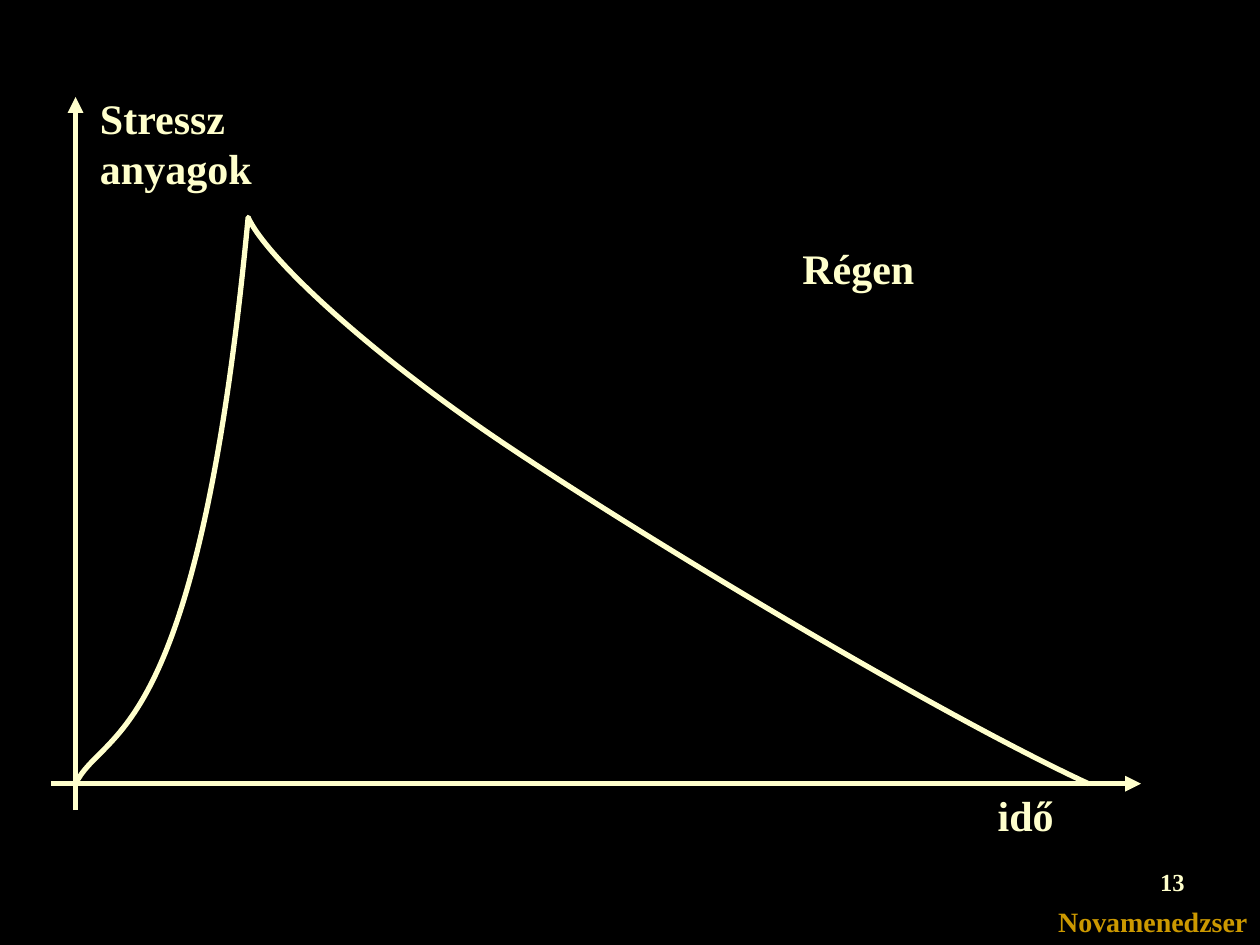
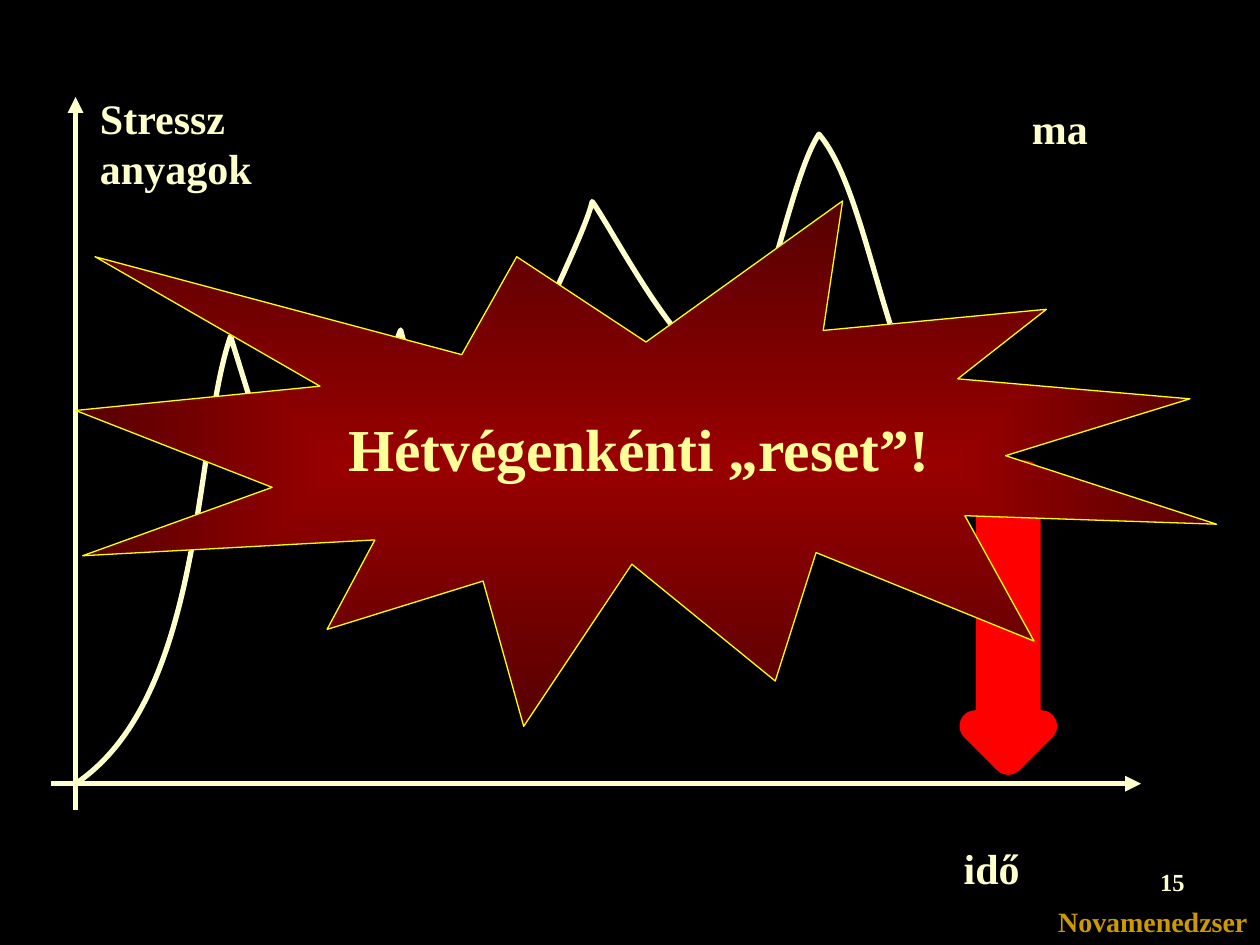
from lxml import etree
from pptx import Presentation, util as u
from pptx.dml.color import RGBColor
from pptx.enum import shapes, text
from pptx.oxml.ns import qn

COLORS = {
    "background": "000000", "chalk": "FFFFCC", "footer": "CC9900", "arrow": "FF0000",
    "seal_core": "990000", "seal_edge": "560000", "seal_line": "FFFF00", "seal_text": "FFFF99",
}
FONT = "Times New Roman"

# The page is a grid of 100 columns by 75 rows.
deck = Presentation()
deck.slide_width, deck.slide_height = u.Inches(10), u.Inches(7.5)
COLUMN, ROW = deck.slide_width / 100, deck.slide_height / 75

ORIGIN = (6, 62.2)
AXES = [((6, 64.3), (6, 7.7)), ((4.05, 62.2), (90.55, 62.2))]

# A curve segment is two control points and an end point, or an end point alone.
charts = [
    {
        "number": "13",
        "labels": [("Régen", 62.7, 18.75, 11), ("idő", 78.2, 62.2, 6.5)],
        "curve": [
            [(8.2, 57.7), (15.7, 59.6), (19.7, 17.25)],
            [(21, 20.2), (28.6, 27.5), (39.7, 35)],
            [(50.8, 42.5), (74.1, 56.5), (86.4, 62.2)],
        ],
    },
    {
        "number": "15",
        "labels": [("ma", 80.9, 7.65, 6.5), ("idő", 75.5, 66.4, 6.5)],
        "curve": [
            [(16.3, 55.3), (15.4, 35.1), (18.3, 26.7)],
            [(21.8, 38)],
            [(23.3, 41), (25.9, 42.9), (27.5, 40.9)],
            [(29.2, 39), (29.8, 31.2), (31.8, 26.2)],
            [(32.6, 29.6), (36.4, 36.4), (38.9, 35.5)],
            [(41.1, 34.8), (41.1, 30.1), (42.4, 26.9)],
            [(43.8, 23.6), (46.6, 17.9), (47, 16)],
            [(48.5, 18), (54.5, 29.8), (57.5, 28.9)],
            [(60.5, 28.1), (62.5, 14.4), (65, 10.65)],
            [(70, 16.5), (70.8, 38.4), (79.7, 36.5)],
        ],
        "reset": "Hétvégenkénti „reset”!",
    },
]


def add_label(page, lines, left, top, width, height, size=24, color="chalk", wrap=False):
    box = page.shapes.add_textbox(*grid(left, top), *grid(width, height))
    box.text_frame.text = lines
    box.text_frame.word_wrap = wrap
    if not wrap:
        box.text_frame.auto_size = text.MSO_AUTO_SIZE.SHAPE_TO_FIT_TEXT
    for para in box.text_frame.paragraphs:
        para.font.name, para.font.size, para.font.bold = FONT, u.Pt(size), True
        para.font.color.rgb = RGBColor.from_string(COLORS[color])
    return box


def grid(column, row):
    return round(column * COLUMN), round(row * ROW)


for chart in charts:
    page = deck.slides.add_slide(deck.slide_layouts[6])
    page.background.fill.solid()
    page.background.fill.fore_color.rgb = RGBColor.from_string(COLORS["background"])
    add_label(page, "Novamenedzser", 83, 71.3, 17, 3.7, 16, "footer")

    # Stress curve: straight segments first, then bent by their control points
    builder = page.shapes.build_freeform(*grid(*ORIGIN))
    builder.add_line_segments([grid(*segment[-1]) for segment in chart["curve"]], close=False)
    curve = builder.convert_to_shape()
    for line, segment in zip(list(curve._element.iter(qn("a:lnTo"))), chart["curve"]):
        if len(segment) == 3:
            bend = etree.Element(qn("a:cubicBezTo"))
            for point in segment:
                x, y = grid(*point)
                etree.SubElement(bend, qn("a:pt"), x=str(x - curve.left), y=str(y - curve.top))
            line.getparent().replace(line, bend)
    curve.shadow.inherit = False
    curve.fill.background()
    curve.line.color.rgb = RGBColor.from_string(COLORS["chalk"])
    curve.line.width = u.Pt(3)
    etree.SubElement(curve.line._get_or_add_ln(), qn("a:round"))

    for tail, tip in AXES:
        axis = page.shapes.add_connector(shapes.MSO_CONNECTOR.STRAIGHT, *grid(*tail), *grid(*tip))
        axis.line.color.rgb = RGBColor.from_string(COLORS["chalk"])
        axis.line.width = u.Pt(3)
        etree.SubElement(axis.line._get_or_add_ln(), qn("a:tailEnd"), type="triangle")
        etree.SubElement(axis._element.spPr, qn("a:effectLst"))

    add_label(page, "Stressz\nanyagok", 6.95, 6.85, 14.2, 9.1)
    for label, left, top, width in chart["labels"]:
        add_label(page, label, left, top, width, 5.1)

    if "reset" in chart:
        arrow = page.shapes.add_shape(
            shapes.MSO_SHAPE.DOWN_ARROW, *grid(77.4, 37.8), *grid(5.25, 22.45))
        arrow.shadow.inherit = False
        arrow.fill.solid()
        arrow.fill.fore_color.rgb = RGBColor.from_string(COLORS["arrow"])
        arrow.line.color.rgb = RGBColor.from_string(COLORS["arrow"])
        arrow.line.width = u.Pt(18)
        etree.SubElement(arrow.line._get_or_add_ln(), qn("a:round"))

        seal = page.shapes.add_shape(
            shapes.MSO_SHAPE.EXPLOSION1, *grid(6, 15.95), *grid(90.55, 41.7))
        seal.shadow.inherit = False
        seal.fill.gradient()
        for stop, position, color in zip(
                seal.fill.gradient_stops, (0, 1), ("seal_core", "seal_edge")):
            stop.position = position
            stop.color.rgb = RGBColor.from_string(COLORS[color])
        gradient = seal._element.spPr.find(qn("a:gradFill"))
        gradient.remove(gradient.find(qn("a:lin")))
        shade = etree.SubElement(gradient, qn("a:path"), path="shape")
        etree.SubElement(shade, qn("a:fillToRect"), l="50000", t="50000", r="50000", b="50000")
        seal.line.color.rgb = RGBColor.from_string(COLORS["seal_line"])
        seal.line.width = u.Pt(0.75)

        seal.text_frame.text = chart["reset"]
        seal.text_frame.word_wrap = False
        seal.text_frame.vertical_anchor = text.MSO_ANCHOR.MIDDLE
        para = seal.text_frame.paragraphs[0]
        para.alignment = text.PP_ALIGN.CENTER
        para.font.name, para.font.size, para.font.bold = FONT, u.Pt(34), True
        para.font.color.rgb = RGBColor.from_string(COLORS["seal_text"])

    number = add_label(page, chart["number"], 71.7, 68.3, 23.3, 5.2, 14, wrap=True)
    number.text_frame.paragraphs[0].alignment = text.PP_ALIGN.RIGHT

deck.save("out.pptx")
